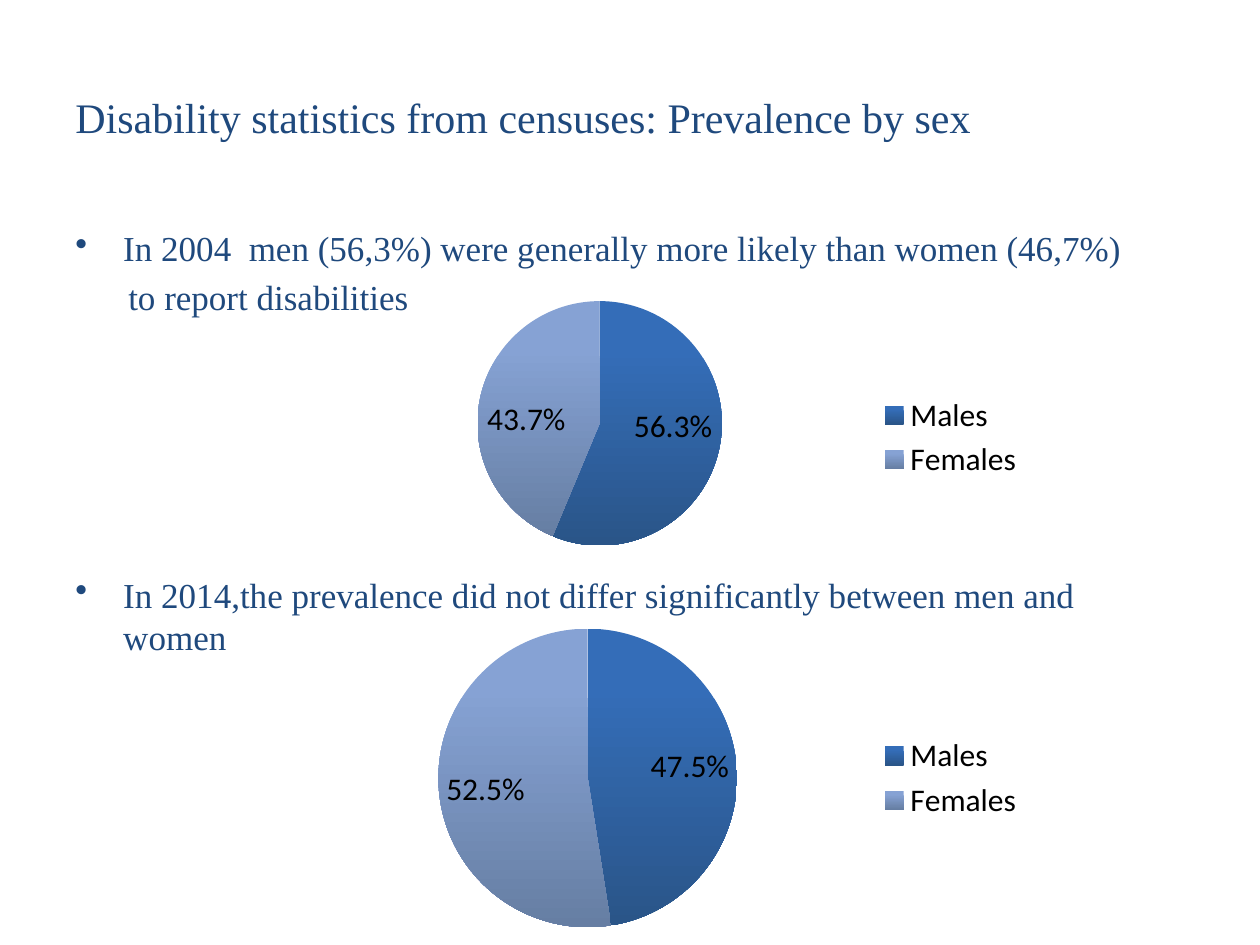
import pptx
import pptx.util
import pptx.chart.data
import pptx.dml.color
import pptx.enum.chart
import pptx.enum.text
import pptx.oxml
import pptx.oxml.ns
from pptx.util import Inches

COLORS = {
    "text": "1F497D",
    "label": "000000",
    "males_top": "346DB8",
    "males_bottom": "2A5588",
    "females_top": "86A2D4",
    "females_bottom": "667EA3",
}
SEXES = ("Males", "Females")


def rgb(name):
    """Return the named colour of the palette."""
    return pptx.dml.color.RGBColor.from_string(COLORS[name])


def set_font(font, size, color, face):
    """Give a font its size, colour and face."""
    font.size = pptx.util.Pt(size)
    font.color.rgb = rgb(color)
    font.name = face


def write(paragraph, text, size=20, before=4, margin=0, hanging=0, bullet=False):
    """Write one paragraph with its spacing, indent and optional bullet."""
    run = paragraph.add_run()
    run.text = text
    set_font(run.font, size, "text", "Times New Roman")
    paragraph.space_before = pptx.util.Pt(before)
    properties = paragraph._p.get_or_add_pPr()
    properties.set("marL", str(Inches(margin)))
    properties.set("indent", str(-Inches(hanging)))
    if bullet:
        mark = pptx.oxml.parse_xml(
            f'<a:buChar {pptx.oxml.ns.nsdecls("a")} char="•"/>'
        )
        properties.append(mark)


def add_frame(slide, left, top, width, height):
    """Add a wrapping text box and return its text frame."""
    box = slide.shapes.add_textbox(*map(Inches, (left, top, width, height)))
    box.text_frame.word_wrap = True
    return box.text_frame


def add_title(slide, left, top, width, height):
    """Place the slide title, centred vertically in its box."""
    title = add_frame(slide, left, top, width, height)
    title.vertical_anchor = pptx.enum.text.MSO_ANCHOR.MIDDLE
    write(title.paragraphs[0],
          "Disability statistics from censuses: Prevalence by sex",
          size=24, before=0)


def add_findings(slide, left, top, width, height):
    """Place the findings of both censuses, leaving room for the first pie."""
    findings = add_frame(slide, left, top, width, height)
    write(findings.paragraphs[0],
          "In 2004  men (56,3%) were generally more likely than women (46,7%)",
          margin=0.38, hanging=0.38, bullet=True)
    write(findings.add_paragraph(), "to report disabilities", margin=0.42)
    write(findings.add_paragraph(),
          "In 2014,the prevalence did not differ significantly between men and women",
          before=146, margin=0.38, hanging=0.38, bullet=True)


def place_pie(chart, x, y, width, height):
    """Fix the pie at fractions of the chart's box."""
    plot_area = chart._chartSpace.chart.plotArea
    for layout in plot_area.findall(pptx.oxml.ns.qn("c:layout")):
        plot_area.remove(layout)
    sizes = "".join(f'<c:{tag} val="{value:.4f}"/>' for tag, value in
                    zip("xywh", (x, y, width, height)))
    plot_area.insert(0, pptx.oxml.parse_xml(
        f'<c:layout {pptx.oxml.ns.nsdecls("c")}><c:manualLayout>'
        '<c:layoutTarget val="inner"/><c:xMode val="edge"/><c:yMode val="edge"/>'
        f'{sizes}</c:manualLayout></c:layout>'))


def add_prevalence(slide, left, top, width, height, shares, pie_left, pie_top, diameter):
    """Place a pie of the shares by sex, with its legend on the right."""
    prevalence = pptx.chart.data.CategoryChartData()
    prevalence.categories = SEXES
    prevalence.add_series("Series 1", shares)
    chart = slide.shapes.add_chart(
        pptx.enum.chart.XL_CHART_TYPE.PIE,
        *map(Inches, (left, top, width, height)), prevalence).chart
    set_font(chart.font, 18, "label", "Calibri")
    chart.has_title = False
    chart.has_legend = True
    chart.legend.position = pptx.enum.chart.XL_LEGEND_POSITION.RIGHT
    chart.legend.include_in_layout = False
    place_pie(chart, pie_left / width, pie_top / height,
              diameter / width, diameter / height)

    pie = chart.plots[0]
    pie.vary_by_categories = True
    for index, sex in enumerate(SEXES):
        sector = pie.series[0].points[index].format
        sector.line.fill.background()
        sector.fill.gradient()
        sector.fill.gradient_angle = 270
        start, end = sector.fill.gradient_stops
        start.color.rgb = rgb(f"{sex.lower()}_top")
        start.position = 0.2
        end.color.rgb = rgb(f"{sex.lower()}_bottom")
    pie.has_data_labels = True
    labels = pie.data_labels
    labels.show_percentage = True
    labels.show_value = False
    labels.number_format = "0.0%"
    labels.number_format_is_linked = False
    labels.position = pptx.enum.chart.XL_LABEL_POSITION.INSIDE_END
    set_font(labels.font, 18, "label", "Calibri")


def main():
    """Build the slide and save it."""
    deck = pptx.Presentation()
    deck.slide_width, deck.slide_height = Inches(10), Inches(7.5)
    slide = deck.slides.add_slide(deck.slide_layouts[6])
    add_title(slide, 0.5, 0.3, 9, 1.25)
    add_findings(slide, 0.5, 1.75, 9, 4.95)
    add_prevalence(slide, 2.4, 2.25, 5.83, 2.44, (56.3, 43.7), 1.39, 0.14, 1.94)
    add_prevalence(slide, 2.4, 4.85, 5.83, 2.65, (47.5, 52.5), 1.08, 0.14, 2.37)
    deck.save("out.pptx")


if __name__ == "__main__":
    main()
